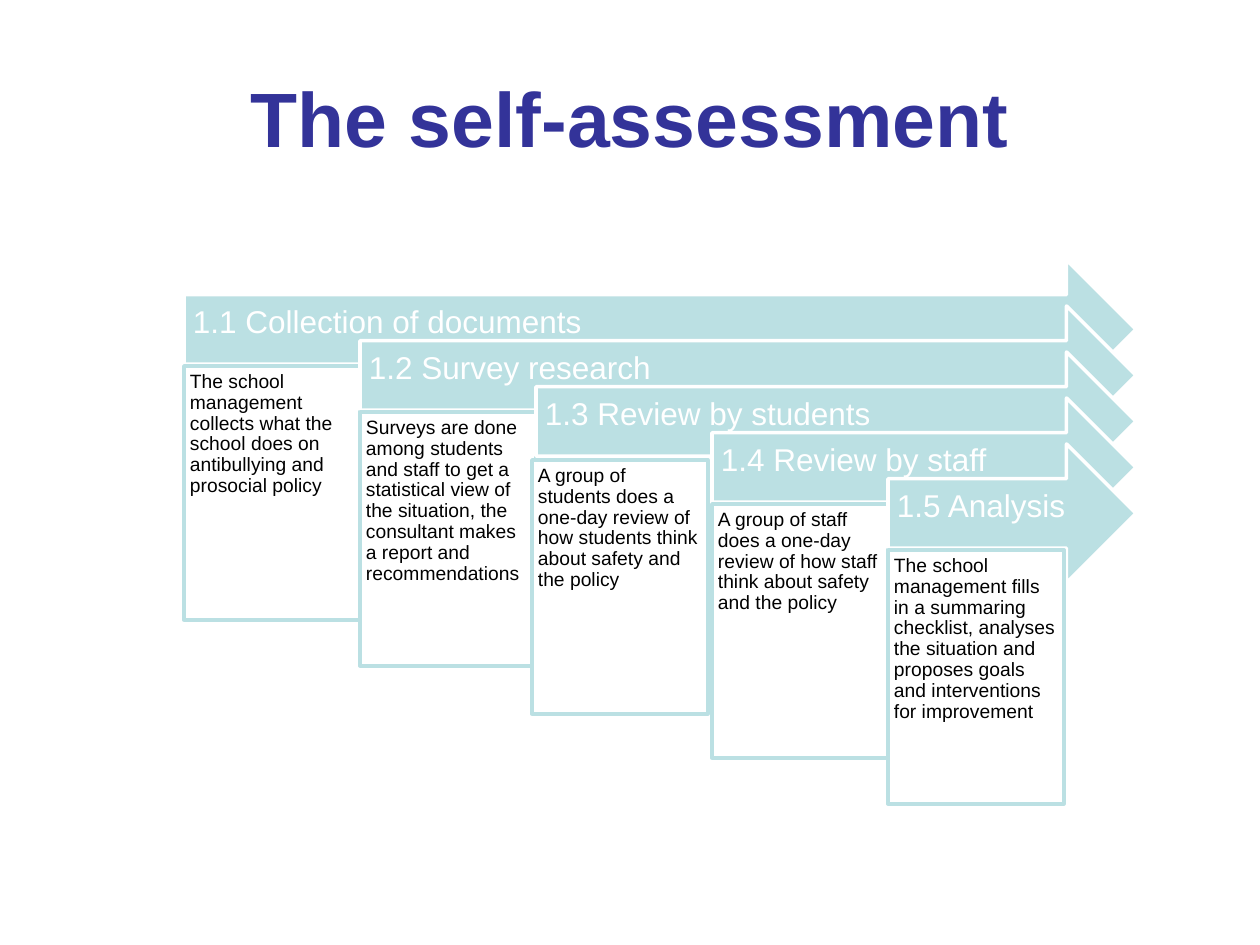
from pptx import Presentation
from pptx.dml.color import RGBColor
from pptx.enum.shapes import MSO_SHAPE as Shape
from pptx.enum.text import MSO_ANCHOR as Anchor, PP_ALIGN as Align
from pptx.util import Emu, Pt

PX_PER_INCH = 126
TEAL, WHITE, BLACK, NAVY = "BBE0E3", "FFFFFF", "000000", "333399"

STEP_LEFT, STEP_TOP = 184, 260
STEP_RIGHT, STEP_DOWN = 176, 46
ARROW_END, ARROW_HEIGHT = 1136, 139
CARD_DROP, CARD_WIDTH, CARD_HEIGHT = 106, 176, 254

# Step heading, explanation, and the card's shift from the regular staircase
STEPS = [
    ("1.1 Collection of documents",
     "The school management collects what the school does on "
     "antibullying and prosocial policy", (0, 0)),
    ("1.2 Survey research",
     "Surveys are done among students and staff to get a statistical view of "
     "the situation, the consultant makes a report and recommendations", (0, 0)),
    ("1.3 Review by students",
     "A group of students does a one-day review of how students think "
     "about safety and the policy", (-4, 2)),
    ("1.4 Review by staff",
     "A group of staff does a one-day review of how staff think "
     "about safety and the policy", (0, 0)),
    ("1.5 Analysis",
     "The school management fills in a summaring checklist, analyses the "
     "situation and proposes goals and interventions for improvement", (0, 0)),
]


def px(length):
    return Emu(round(length * 914400 / PX_PER_INCH))


def color(hex_code):
    return RGBColor.from_string(hex_code)


def write(frame, text, size, hex_code, align=Align.LEFT, bold=False):
    frame.text = text
    paragraph = frame.paragraphs[0]
    paragraph.alignment = align
    font = paragraph.runs[0].font
    font.name, font.size, font.bold = "Arial", Pt(size), bold
    font.color.rgb = color(hex_code)


def set_margins(frame, left, top, right, bottom):
    frame.margin_left, frame.margin_top = px(left), px(top)
    frame.margin_right, frame.margin_bottom = px(right), px(bottom)


def add_panel(slide, preset, box, fill, outline, text, size, hex_code):
    """Add an outlined shape with text in it and return its text frame."""
    panel = slide.shapes.add_shape(preset, *map(px, box))
    panel.shadow.inherit = False
    panel.fill.solid()
    panel.fill.fore_color.rgb = color(fill)
    panel.line.color.rgb = color(outline)
    panel.line.width = Pt(2)
    frame = panel.text_frame
    frame.word_wrap = True
    write(frame, text, size, hex_code)
    frame.paragraphs[0].line_spacing = 0.9
    return frame


def add_arrow(slide, left, top, heading):
    box = (left, top, ARROW_END - left, ARROW_HEIGHT)
    frame = add_panel(slide, Shape.RIGHT_ARROW, box, TEAL, WHITE, heading, 18, WHITE)
    frame.vertical_anchor = Anchor.MIDDLE
    set_margins(frame, 9, 9, 30, 21)


def add_card(slide, left, top, explanation):
    box = (left, top, CARD_WIDTH, CARD_HEIGHT)
    frame = add_panel(slide, Shape.RECTANGLE, box, WHITE, TEAL, explanation, 11, BLACK)
    frame.vertical_anchor = Anchor.TOP
    set_margins(frame, 6, 6, 6, 6)


def set_title(slide, text):
    title = slide.shapes.title
    title.left, title.top, title.width, title.height = map(px, (63, 38, 1134, 158))
    title.text_frame.vertical_anchor = Anchor.MIDDLE
    write(title.text_frame, text, 44, NAVY, Align.CENTER, bold=True)


def main():
    deck = Presentation()
    deck.slide_width, deck.slide_height = px(1260), px(945)
    slide = deck.slides.add_slide(deck.slide_layouts[5])
    set_title(slide, "The self-assessment")
    for index, (heading, explanation, (shift_x, shift_y)) in enumerate(STEPS):
        left = STEP_LEFT + index * STEP_RIGHT
        top = STEP_TOP + index * STEP_DOWN
        add_arrow(slide, left, top, heading)
        add_card(slide, left + shift_x, top + CARD_DROP + shift_y, explanation)
    deck.save("out.pptx")


if __name__ == "__main__":
    main()
